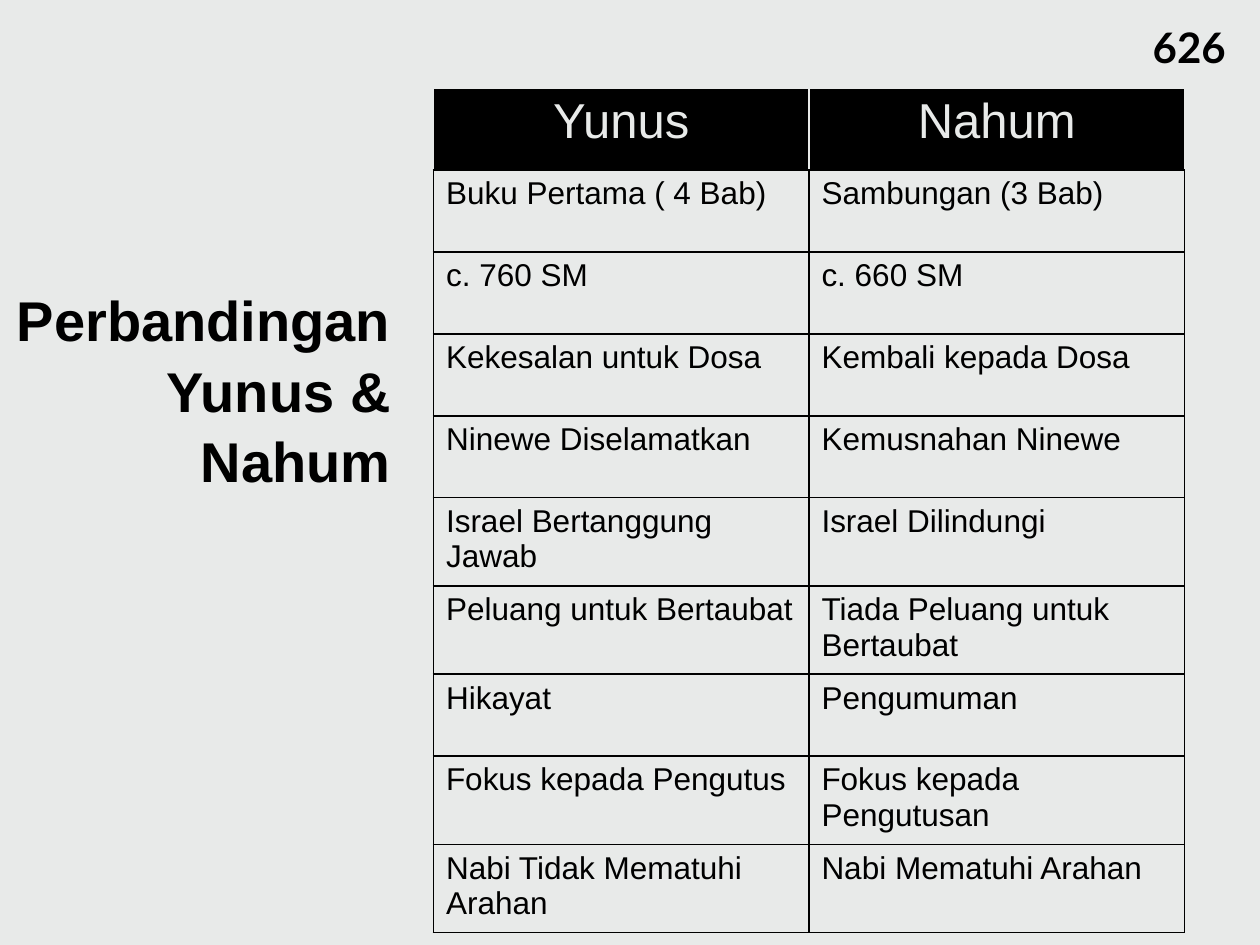
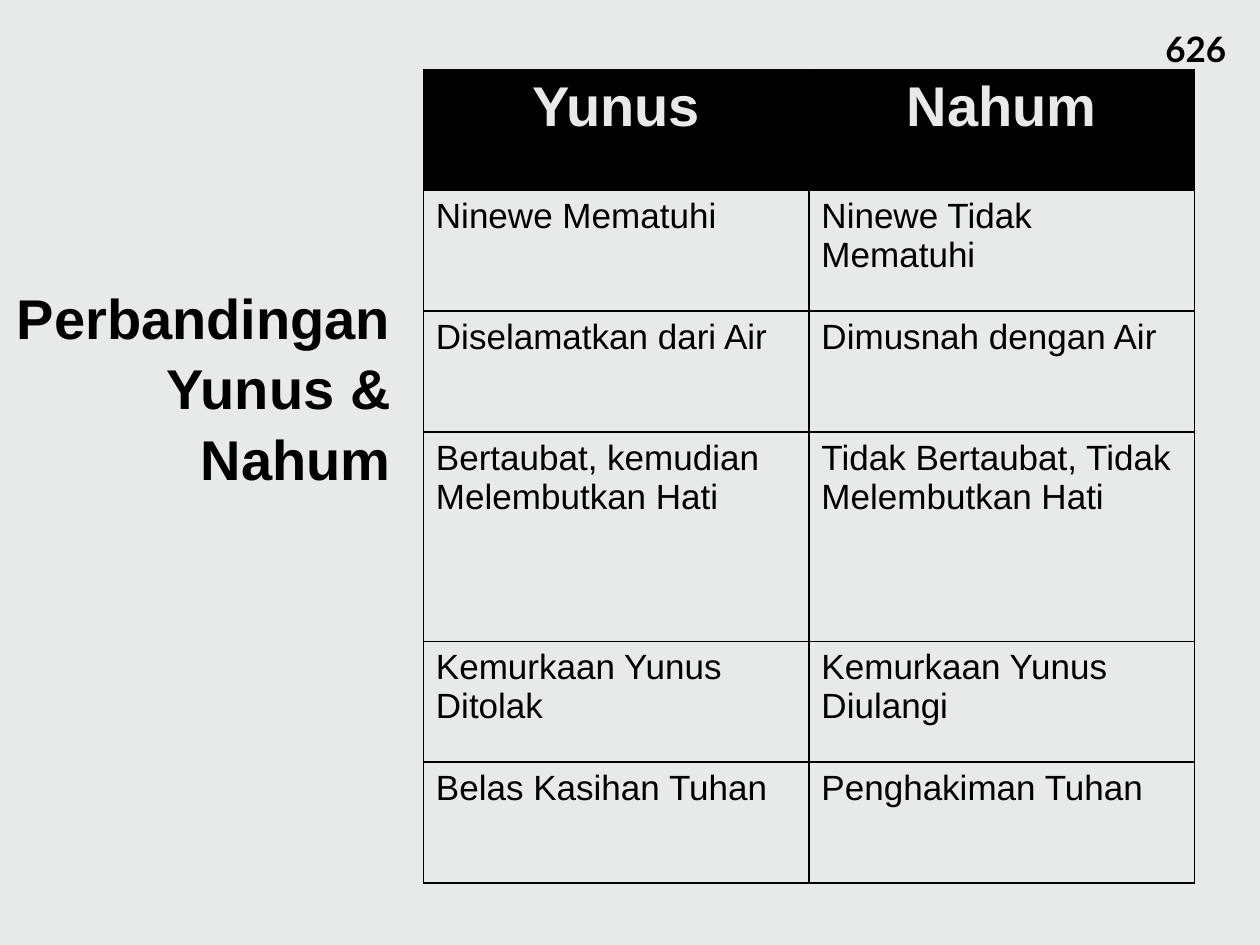
import pptx
import pptx.dml.color
import pptx.enum.text
import pptx.oxml
import pptx.oxml.ns
import pptx.util
from pptx.util import Inches

PALE, BLACK, WHITE = "E8EAE9", "000000", "FFFFFF"
ALIGN = pptx.enum.text.PP_ALIGN
ANCHOR = pptx.enum.text.MSO_ANCHOR
NS = pptx.oxml.ns.nsdecls("a")
TITLE = "Perbandingan Yunus & Nahum"
PAGE = "626"
HEADS = ("Yunus", "Nahum")

ORIGINS = [
    ("Buku Pertama ( 4 Bab)", "Sambungan (3 Bab)"),
    ("c. 760 SM", "c. 660 SM"),
    ("Kekesalan untuk Dosa", "Kembali kepada Dosa"),
    ("Ninewe Diselamatkan", "Kemusnahan Ninewe"),
    ("Israel Bertanggung Jawab", "Israel Dilindungi"),
    ("Peluang untuk Bertaubat", "Tiada Peluang untuk Bertaubat"),
    ("Hikayat", "Pengumuman"),
    ("Fokus kepada Pengutus", "Fokus kepada Pengutusan"),
    ("Nabi Tidak Mematuhi Arahan", "Nabi Mematuhi Arahan"),
]
RESULTS = [
    ("Ninewe Mematuhi", "Ninewe Tidak Mematuhi"),
    ("Diselamatkan dari Air", "Dimusnah dengan Air"),
    ("Bertaubat, kemudian Melembutkan Hati",
     "Tidak Bertaubat, Tidak Melembutkan Hati"),
    ("Kemurkaan Yunus Ditolak", "Kemurkaan Yunus Diulangi"),
    ("Belas Kasihan Tuhan", "Penghakiman Tuhan"),
]


def color(code):
    return pptx.dml.color.RGBColor.from_string(code)


def write(frame, text, size, font="Arial", ink=BLACK, bold=False,
          align=ALIGN.LEFT):
    frame.text = text
    para = frame.paragraphs[0]
    para.alignment = align
    run = para.runs[0]
    run.font.size = pptx.util.Pt(size)
    run.font.name = font
    run.font.bold = bold
    run.font.color.rgb = color(ink)
    return para


def add_slide(deck):
    slide = deck.slides.add_slide(deck.slide_layouts[6])
    slide.background.fill.solid()
    slide.background.fill.fore_color.rgb = color(PALE)
    return slide


def add_box(slide, left, top, width, height):
    box = slide.shapes.add_textbox(
        Inches(left), Inches(top), Inches(width), Inches(height))
    return box.text_frame


def add_glow(run):
    """Give the letters a pale offset shadow."""
    glow = pptx.oxml.parse_xml(
        f'<a:effectLst {NS}><a:outerShdw blurRad="38100" dist="38100" '
        f'dir="2700000"><a:srgbClr val="{WHITE}"/></a:outerShdw></a:effectLst>')
    fill = run.font.fill._xPr.find(pptx.oxml.ns.qn("a:solidFill"))
    fill.addnext(glow)


def add_title(slide, top):
    frame = add_box(slide, 0, top, 3.2, 5.5)
    frame.word_wrap = True
    frame.vertical_anchor = ANCHOR.MIDDLE
    para = write(frame, TITLE, 32, bold=True, align=ALIGN.RIGHT)
    para.line_spacing = 1.05
    add_glow(para.runs[0])


def add_page(slide, left, top, width, height, size):
    frame = add_box(slide, left, top, width, height)
    frame.word_wrap = False
    write(frame, PAGE, size, font="Lato", bold=True)


def add_edges(cell, ink):
    """Draw the four cell borders; the bottom one is always black."""
    props = cell._tc.get_or_add_tcPr()
    for side in "LRTB":
        tone = BLACK if side == "B" else ink
        props.append(pptx.oxml.parse_xml(
            f'<a:ln{side} {NS} w="12700"><a:solidFill>'
            f'<a:srgbClr val="{tone}"/></a:solidFill></a:ln{side}>'))


def add_table(slide, left, top, width, heights, rows, size, head, edge):
    """Add a two-column table; head holds the header's font settings."""
    table = slide.shapes.add_table(
        len(heights), 2, Inches(left), Inches(top), Inches(2 * width),
        Inches(sum(heights))).table
    table.first_row = table.horz_banding = False
    for col in table.columns:
        col.width = Inches(width)
    for i, (pair, height) in enumerate(zip([HEADS] + rows, heights)):
        table.rows[i].height = Inches(height)
        for j, text in enumerate(pair):
            cell = table.cell(i, j)
            if i == 0:
                add_edges(cell, edge)
                cell.fill.solid()
                cell.fill.fore_color.rgb = color(BLACK)
                write(cell.text_frame, text, ink=PALE, align=ALIGN.CENTER,
                      **head)
            else:
                add_edges(cell, BLACK)
                cell.fill.background()
                write(cell.text_frame, text, size)


def main():
    deck = pptx.Presentation()
    deck.slide_width, deck.slide_height = Inches(10), Inches(7.5)

    slide = add_slide(deck)
    add_title(slide, 0.33)
    add_page(slide, 9.05, 0.12, 0.84, 0.5, 24)
    heights = [0.65] * 5 + [0.7, 0.7, 0.65, 0.7, 0.7]
    add_table(slide, 3.44, 0.7, 2.98, heights, ORIGINS, 18,
              {"size": 28}, PALE)

    slide = add_slide(deck)
    add_title(slide, 0.31)
    add_page(slide, 9.15, 0.17, 0.73, 0.44, 20)
    heights = [0.96] * 3 + [1.66, 0.96, 0.96]
    add_table(slide, 3.36, 0.55, 3.06, heights, RESULTS, 20,
              {"size": 32, "bold": True}, BLACK)

    deck.save("out.pptx")


if __name__ == "__main__":
    main()
